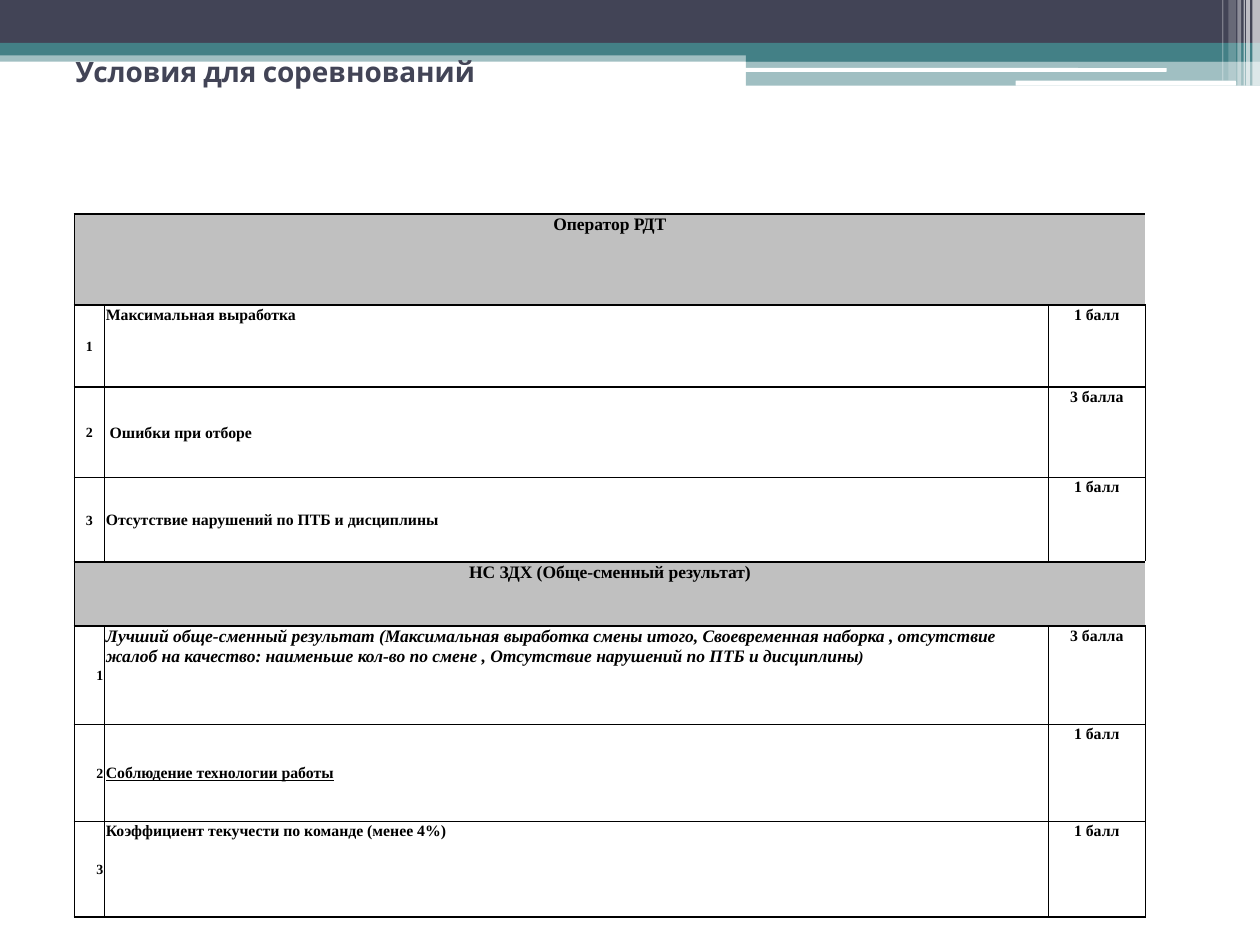
from lxml import etree
from pptx import Presentation
from pptx.dml.color import RGBColor
from pptx.enum import shapes, text
from pptx.oxml import ns
from pptx.util import Inches, Pt

HUES = {"navy": "424456", "teal": "438086", "white": "FFFFFF",
        "gray": "C0C0C0", "black": "000000"}
SERIF = "Times New Roman"
TITLE = "Условия для соревнований"

# Header bars: left, top, width, height, colour, opacity %, rounded
BARS = [
    (0, 0.4, 10, 0.09, "teal", 50, False),
    (0, 0, 10, 0.34, "navy", 100, False),
    (0, 0.34, 10, 0.1, "teal", 100, False),
    (5.92, 0.39, 4.08, 0.1, "teal", 100, False),
    (5.92, 0.48, 4.08, 0.2, "teal", 50, False),
    (5.91, 0.54, 3.35, 0.03, "white", 100, True),
    (8.06, 0.64, 1.75, 0.04, "white", 100, True),
]
# Vertical stripes at the right: left, width, height, opacity %
STRIPES = [
    (9.94, 0.06, 0.68, 65), (9.89, 0.03, 0.68, 65), (9.87, 0.01, 0.68, 60),
    (9.82, 0.03, 0.68, 40), (9.75, 0.06, 0.64, 20), (9.7, 0.01, 0.64, 30),
]
BARS += [(x, 0, w, h, "white", a, False) for x, w, h, a in STRIPES]

# Each rule: runs (text, size, style), vertical anchor, points
COLS = [0.24, 7.49, 0.77]
LEFT, TOP = 0.59, 1.7
TABLES = [
    {"head": "Оператор РДТ", "rows": [0.72, 0.65, 0.72, 0.67], "num": "CENTER",
     "rules": [
         ([("Максимальная выработка", 9, "")], "TOP", "1 балл"),
         ([(" Ошибки при отборе", 9, "")], "MIDDLE", "3 балла"),
         ([("Отсутствие нарушений по ПТБ и дисциплины", 9, "")],
          "MIDDLE", "1 балл"),
     ]},
    {"head": "НС ЗДХ (Обще-сменный результат)",
     "rows": [0.51, 0.78, 0.77, 0.76], "num": "RIGHT",
     "rules": [
         ([("Лучший обще-сменный результат (Максимальная выработка смены "
            "итого, Своевременная наборка , отсутствие жалоб на качество: "
            "наименьше кол-во по смене , Отсутствие нарушений по ПТБ и "
            "дисциплины", 10, "i"), (")", 9, "i")], "TOP", "3 балла"),
         ([("Соблюдение технологии работы", 9, "u")], "MIDDLE", "1 балл"),
         ([("Коэффициент текучести по команде (менее 4%)", 9, "")],
          "TOP", "1 балл"),
     ]},
]


def tint(fill, hue):
    fill.solid()
    fill.fore_color.rgb = RGBColor.from_string(HUES[hue])


def add_run(para, words, size, font, hue, style=""):
    run = para.add_run()
    run.text = words
    face = run.font
    face.size, face.name, face.bold = Pt(size), font, True
    face.italic, face.underline = "i" in style, "u" in style
    face.color.rgb = RGBColor.from_string(HUES[hue])


def add_bar(slide, x, y, w, h, hue, alpha, rounded):
    kind = shapes.MSO_SHAPE
    bar = slide.shapes.add_shape(
        kind.ROUNDED_RECTANGLE if rounded else kind.RECTANGLE,
        Inches(x), Inches(y), Inches(w), Inches(h))
    bar.shadow.inherit = False
    bar.line.fill.background()
    tint(bar.fill, hue)
    if alpha < 100:
        tone = bar.fill._xPr.find(".//" + ns.qn("a:srgbClr"))
        etree.SubElement(tone, ns.qn("a:alpha"), val=str(alpha * 1000))


def rule_cell(cell, sides):
    props = cell._tc.get_or_add_tcPr()
    for side in sides:
        line = etree.SubElement(props, ns.qn("a:ln" + side), w=str(Pt(1)))
        paint = etree.SubElement(line, ns.qn("a:solidFill"))
        etree.SubElement(paint, ns.qn("a:srgbClr"), val=HUES["black"])


def fill_cell(cell, runs, align="LEFT", anchor="TOP"):
    cell.margin_left = cell.margin_right = cell.margin_top = Inches(0.01)
    cell.margin_bottom = 0
    cell.vertical_anchor = getattr(text.MSO_ANCHOR, anchor)
    para = cell.text_frame.paragraphs[0]
    para.alignment = getattr(text.PP_ALIGN, align)
    for words, size, style in runs:
        add_run(para, words, size, SERIF, "black", style)


def add_rules(slide, top, data):
    rows = data["rows"]
    grid = slide.shapes.add_table(
        len(rows), len(COLS), Inches(LEFT), Inches(top),
        Inches(sum(COLS)), Inches(sum(rows))).table
    grid.first_row = grid.horz_banding = False
    for col, wide in zip(grid.columns, COLS):
        col.width = Inches(wide)
    for row, high in zip(grid.rows, rows):
        row.height = Inches(high)

    # Heading row is merged and open at the right
    head = grid.cell(0, 0)
    head.merge(grid.cell(0, len(COLS) - 1))
    for i, cell in enumerate(grid.rows[0].cells):
        rule_cell(cell, "TB" if i else "LTB")
        tint(cell.fill, "gray")
    fill_cell(head, [(data["head"], 10, "")], "CENTER")

    # Numbered rules with their points
    for i, (runs, anchor, score) in enumerate(data["rules"], 1):
        cells = list(grid.rows[i].cells)
        for cell in cells:
            rule_cell(cell, "LRTB")
            cell.fill.background()
        fill_cell(cells[0], [(str(i), 8, "")], data["num"], "MIDDLE")
        fill_cell(cells[1], runs, anchor=anchor)
        fill_cell(cells[2], [(score, 9, "")], "CENTER")


def main():
    deck = Presentation()
    deck.slide_width, deck.slide_height = Inches(10), Inches(7.5)
    slide = deck.slides.add_slide(deck.slide_layouts[6])
    tint(slide.background.fill, "white")
    for bar in BARS:
        add_bar(slide, *bar)

    # Title
    box = slide.shapes.add_textbox(
        Inches(0.5), Inches(0.3), Inches(9), Inches(0.54)).text_frame
    box.word_wrap = True
    box.vertical_anchor = text.MSO_ANCHOR.MIDDLE
    add_run(box.paragraphs[0], TITLE, 16, "Cabin", "navy")

    # Tables stacked one under the other
    top = TOP
    for data in TABLES:
        add_rules(slide, top, data)
        top += sum(data["rows"])
    deck.save("out.pptx")


if __name__ == "__main__":
    main()
